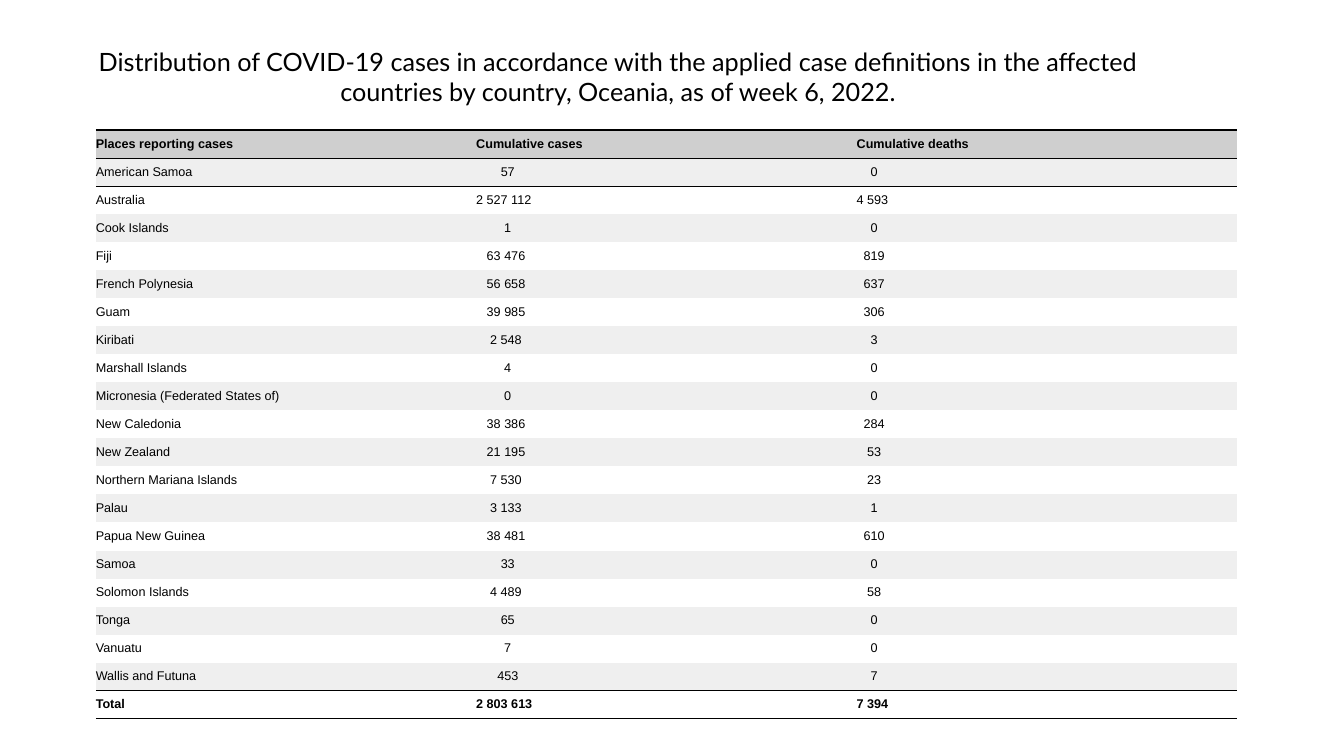
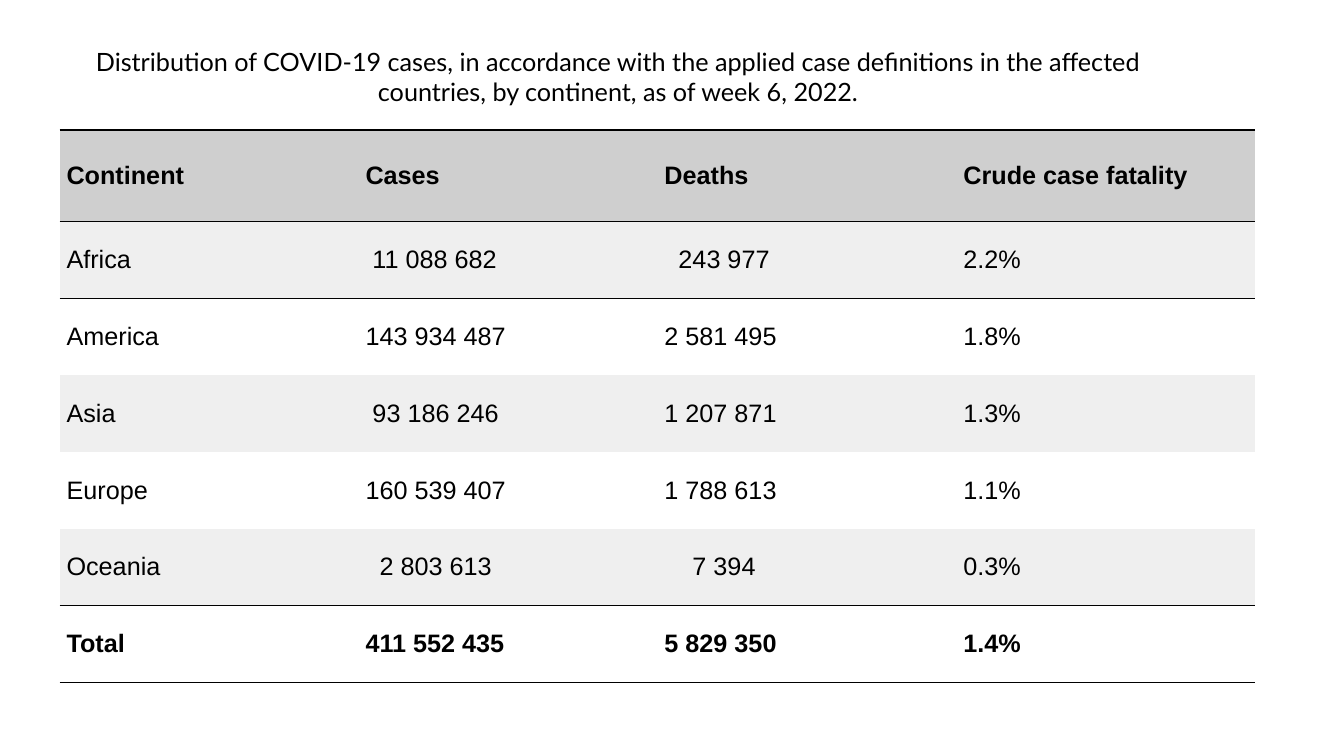
"""Build two slides of COVID-19 case tables, for Oceania and by continent."""
from lxml import etree
from pptx import Presentation
from pptx.dml.color import RGBColor
from pptx.enum.text import MSO_ANCHOR, MSO_AUTO_SIZE, PP_ALIGN
from pptx.oxml.ns import qn
from pptx.util import Inches, Pt

MIDDLE = MSO_ANCHOR.MIDDLE
NO_AUTOFIT = MSO_AUTO_SIZE.NONE
CENTER = PP_ALIGN.CENTER
LEFT = PP_ALIGN.LEFT

COLORS = {"text": "000000", "header": "CFCFCF", "band": "EFEFEF", "plain": "FFFFFF"}
TITLE_FONT = {"name": "Lato", "size": Pt(18), "bold": False}
TITLE_BOX = {"left": Inches(0.47), "top": Inches(0.24),
             "width": Inches(11.32), "height": Inches(1.04)}
TITLE_FRAME = {"word_wrap": True, "auto_size": NO_AUTOFIT, "vertical_anchor": MIDDLE}
CELL_FORMAT = {"vertical_anchor": MIDDLE, "margin_left": 0, "margin_top": 0,
               "margin_right": 0, "margin_bottom": 0}
TABLE_TOP = 1.29
RULE_WIDTH = Pt(1)
DIGIT_GAP = 0.278
PLAIN_TABLE_STYLE = "{2D5ABB26-0587-4C30-8999-92F81FD0307C}"

SLIDES = [
    {
        "title": "Distribution of COVID-19 cases in accordance with the applied case "
                 "definitions in the affected countries by country, Oceania, "
                 "as of week 6, 2022.",
        "left": 0.95, "width": 11.32, "height": 5.84, "header_height": 0.28,
        "size": 9, "indent": 0,
        "rows": [
            ("Places reporting cases", "Cumulative cases", "Cumulative deaths"),
            ("American Samoa", "57", "0"),
            ("Australia", "2 527 112", "4 593"),
            ("Cook Islands", "1", "0"),
            ("Fiji", "63 476", "819"),
            ("French Polynesia", "56 658", "637"),
            ("Guam", "39 985", "306"),
            ("Kiribati", "2 548", "3"),
            ("Marshall Islands", "4", "0"),
            ("Micronesia (Federated States of)", "0", "0"),
            ("New Caledonia", "38 386", "284"),
            ("New Zealand", "21 195", "53"),
            ("Northern Mariana Islands", "7 530", "23"),
            ("Palau", "3 133", "1"),
            ("Papua New Guinea", "38 481", "610"),
            ("Samoa", "33", "0"),
            ("Solomon Islands", "4 489", "58"),
            ("Tonga", "65", "0"),
            ("Vanuatu", "7", "0"),
            ("Wallis and Futuna", "453", "7"),
            ("Total", "2 803 613", "7 394"),
        ],
    },
    {
        "title": "Distribution of COVID-19 cases, in accordance with the applied case "
                 "definitions in the affected countries, by continent, "
                 "as of week 6, 2022.",
        "left": 0.59, "width": 11.86, "height": 5.48, "header_height": 0.91,
        "size": 18, "indent": 0.07,
        "rows": [
            ("Continent", "Cases", "Deaths", "Crude case fatality"),
            ("Africa", "11 088 682", "243 977", "2.2%"),
            ("America", "143 934 487", "2 581 495", "1.8%"),
            ("Asia", "93 186 246", "1 207 871", "1.3%"),
            ("Europe", "160 539 407", "1 788 613", "1.1%"),
            ("Oceania", "2 803 613", "7 394", "0.3%"),
            ("Total", "411 552 435", "5 829 350", "1.4%"),
        ],
    },
]


def apply_format(target, values):
    """Set each named attribute on the target."""
    for name, value in values.items():
        setattr(target, name, value)


def add_border(cell, side):
    """Draw a solid rule on one side of a table cell."""
    line = etree.SubElement(cell._tc.get_or_add_tcPr(), qn(f"a:{side}"), w=str(RULE_WIDTH))
    fill = etree.SubElement(line, qn("a:solidFill"))
    etree.SubElement(fill, qn("a:srgbClr"), val=COLORS["text"])


presentation = Presentation()
presentation.slide_width = Inches(13.33)
presentation.slide_height = Inches(7.5)
title_only = presentation.slide_layouts[5]

for content in SLIDES:
    slide = presentation.slides.add_slide(title_only)
    title = slide.shapes.title
    apply_format(title, TITLE_BOX)
    apply_format(title.text_frame, TITLE_FRAME)
    paragraph = title.text_frame.paragraphs[0]
    paragraph.text = content["title"]
    paragraph.alignment = CENTER
    apply_format(paragraph.font, TITLE_FONT)
    paragraph.font.color.rgb = RGBColor.from_string(COLORS["text"])

    rows = content["rows"]
    row_count, column_count = len(rows), len(rows[0])
    table = slide.shapes.add_table(
        row_count, column_count, Inches(content["left"]), Inches(TABLE_TOP),
        Inches(content["width"]), Inches(content["height"])).table
    table._tbl.tblPr.find(qn("a:tableStyleId")).text = PLAIN_TABLE_STYLE
    body_height = (content["height"] - content["header_height"]) / (row_count - 1)
    for row_index, row in enumerate(table.rows):
        row.height = Inches(body_height if row_index else content["header_height"])

    digit_counts = [max(len(text) for text in column) for column in zip(*rows[1:])]
    ruled_edges = {0, 1, row_count - 1, row_count}
    cell_font = {"name": "Arial", "size": Pt(content["size"])}

    for row_index, values in enumerate(rows):
        is_header = row_index == 0
        is_total = row_index == row_count - 1
        fill_name = "header" if is_header else "band" if row_index % 2 and not is_total else "plain"
        if is_total:
            fill_name = "plain"
        for column_index, text in enumerate(values):
            cell = table.cell(row_index, column_index)
            apply_format(cell, CELL_FORMAT)
            for edge, side in ((row_index, "lnT"), (row_index + 1, "lnB")):
                if edge in ruled_edges:
                    add_border(cell, side)
            cell.fill.solid()
            cell.fill.fore_color.rgb = RGBColor.from_string(COLORS[fill_name])

            paragraph = cell.text_frame.paragraphs[0]
            paragraph.text = text
            paragraph.alignment = LEFT
            indent = Inches(content["indent"])
            if column_index and not is_header:
                missing_digits = digit_counts[column_index] - len(text)
                indent += int(missing_digits * DIGIT_GAP * Pt(content["size"]))
            paragraph._p.get_or_add_pPr().set("marL", str(indent))
            apply_format(paragraph.font, cell_font)
            paragraph.font.bold = is_header or is_total
            paragraph.font.color.rgb = RGBColor.from_string(COLORS["text"])

presentation.save("out.pptx")
